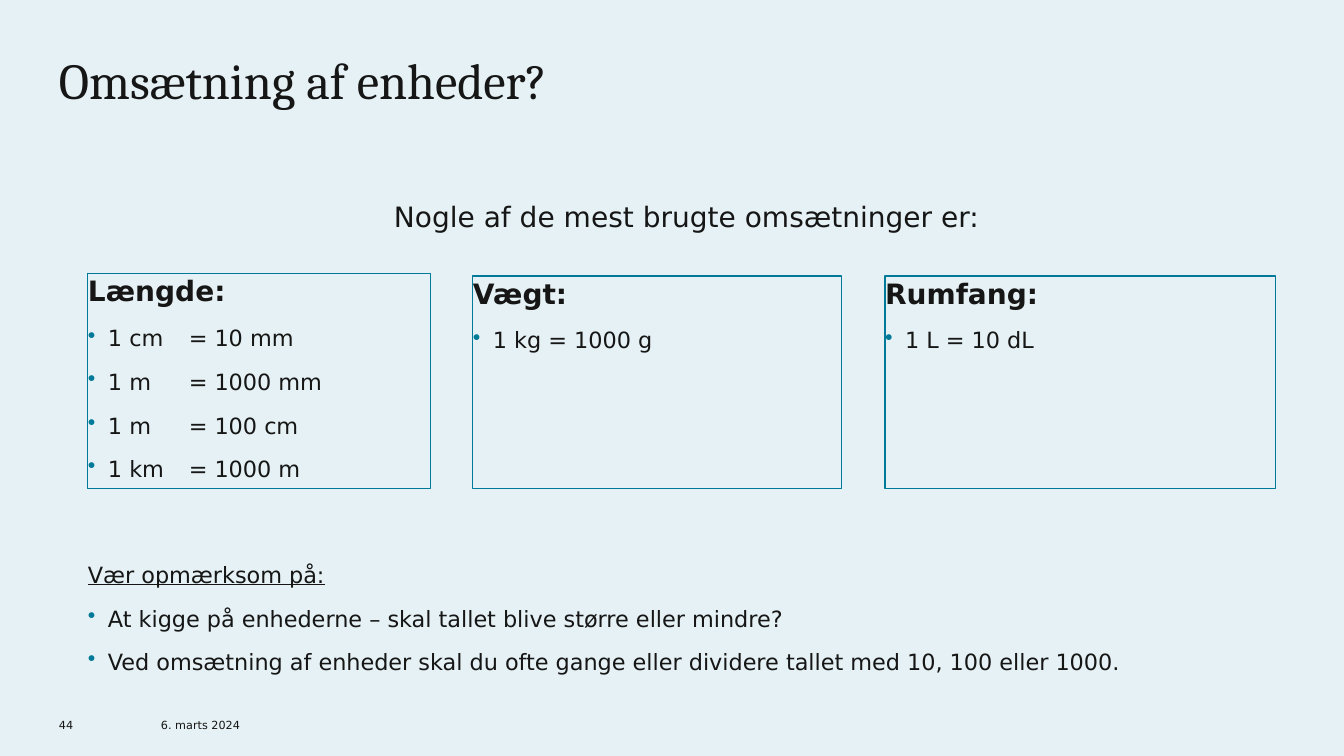
import pptx
import pptx.dml.color
import pptx.enum.shapes
import pptx.enum.text
import pptx.oxml.ns
import pptx.util
from lxml import etree

# Content
TITLE = "Omsætning af enheder?"
INTRO = "Nogle af de mest brugte omsætninger er:"
UNITS = [
    ("Længde:", ["1 cm\t= 10 mm", "1 m\t= 1000 mm", "1 m\t= 100 cm", "1 km\t= 1000 m"],
     (88, 274, 343, 215)),
    ("Vægt:", ["1 kg = 1000 g"], (473, 276, 369, 213)),
    ("Rumfang:", ["1 L = 10 dL"], (885, 276, 391, 213)),
]
ADVICE_HEADING = "Vær opmærksom på:"
ADVICE = [
    "At kigge på enhederne – skal tallet blive større eller mindre?",
    "Ved omsætning af enheder skal du ofte gange eller dividere tallet med 10, 100 eller 1000.",
]
FOOTER = [("6. marts 2024", (161, 712, 140, 20)), ("44", (59, 712, 30, 20))]

# Style
COLORS = {"background": "E5F1F4", "text": "161616", "accent": "007A98"}
HEADING_FONT, BODY_FONT = "Cambria", "DejaVu Sans"
INDENT = 20
ANCHOR = pptx.enum.text.MSO_ANCHOR


def px(length):
    return round(length * 914400 / 100.8)


def color(name):
    return pptx.dml.color.RGBColor.from_string(COLORS[name])


def add_bullet(para):
    properties = para._p.get_or_add_pPr()
    properties.set("marL", str(px(INDENT)))
    properties.set("indent", str(-px(INDENT)))
    qn = pptx.oxml.ns.qn
    bullet_color = etree.SubElement(properties, qn("a:buClr"))
    etree.SubElement(bullet_color, qn("a:srgbClr"), val=COLORS["accent"])
    etree.SubElement(properties, qn("a:buChar"), char="•")


def write(shape, lines, anchor=ANCHOR.TOP, wrap=True):
    """Each line is (text, bulleted, font values)."""
    frame = shape.text_frame
    settings = {"margin_left": 0, "margin_right": 0, "margin_top": 0, "margin_bottom": 0,
                "vertical_anchor": anchor, "word_wrap": wrap}
    for name, value in settings.items():
        setattr(frame, name, value)
    for index, (text, bulleted, values) in enumerate(lines):
        para = frame.add_paragraph() if index else frame.paragraphs[0]
        if bulleted:
            add_bullet(para)
        para.alignment = pptx.enum.text.PP_ALIGN.LEFT
        if index:
            para.space_before = pptx.util.Pt(12)
        span = para.add_run()
        span.text = text
        for name, value in {"name": BODY_FONT, **values}.items():
            setattr(span.font, name, value)
        span.font.color.rgb = color("text")
    return frame


def size(points, **values):
    return {"size": pptx.util.Pt(points), **values}


def bullets(texts):
    return [(text, True, size(16)) for text in texts]


def main():
    deck = pptx.Presentation()
    deck.slide_width, deck.slide_height = px(1344), px(756)
    page = deck.slides.add_slide(deck.slide_layouts[6])
    page.background.fill.solid()
    page.background.fill.fore_color.rgb = color("background")

    def text_box(place, lines, **options):
        return write(page.shapes.add_textbox(*map(px, place)), lines, **options)

    # Title and introduction
    title = text_box((59, 59, 1020, 103), [(TITLE, False, size(36, name=HEADING_FONT))])
    title.paragraphs[0].line_spacing = 0.83
    text_box((394, 200, 659, 60), [(INTRO, False, size(20))])

    # Framed unit boxes
    for heading, conversions, place in UNITS:
        box = page.shapes.add_shape(pptx.enum.shapes.MSO_SHAPE.RECTANGLE, *map(px, place))
        box.shadow.inherit = False
        box.fill.background()
        box.line.color.rgb = color("accent")
        box.line.width = pptx.util.Pt(0.75)
        write(box, [(heading, False, size(20, bold=True))] + bullets(conversions))

    # Advice
    text_box((88, 561, 1050, 149),
             [(ADVICE_HEADING, False, size(16, underline=True))] + bullets(ADVICE), wrap=False)

    # Footer
    for text, place in FOOTER:
        text_box(place, [(text, False, size(8))], anchor=ANCHOR.BOTTOM)

    deck.save("out.pptx")


if __name__ == "__main__":
    main()
